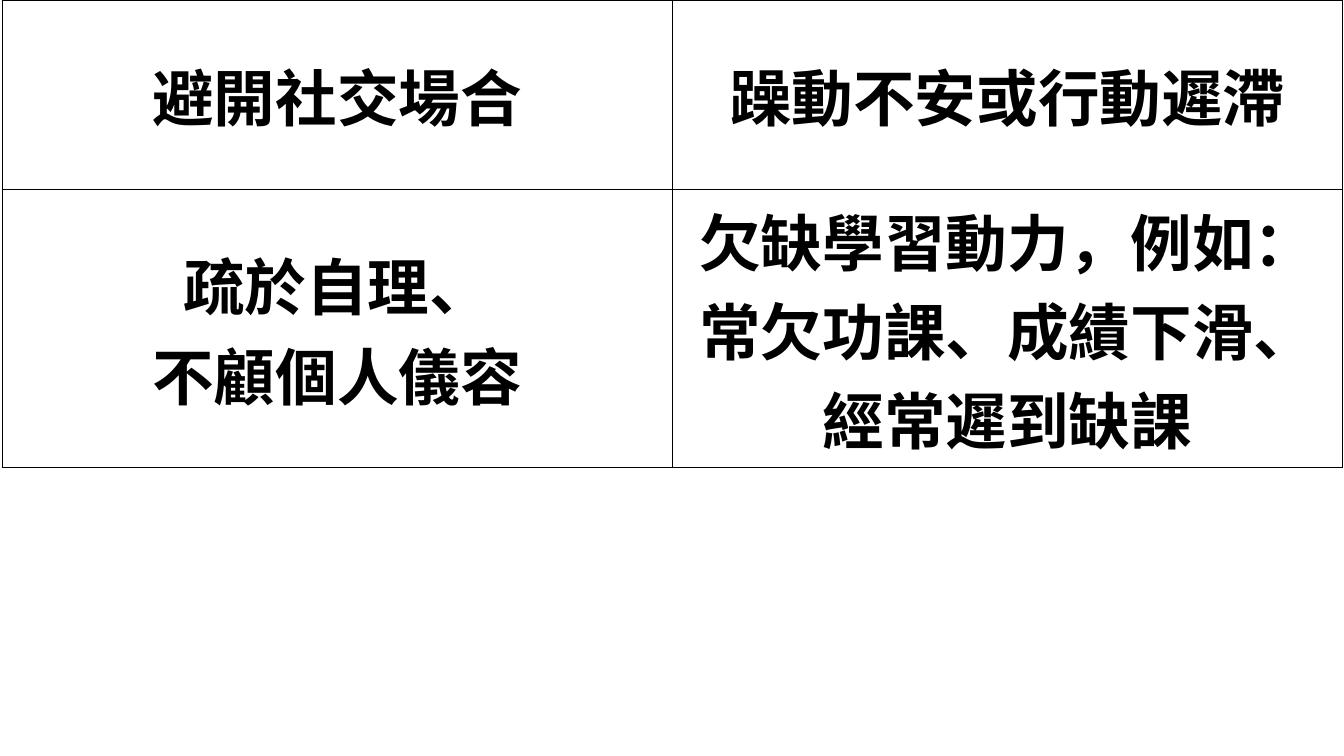
from lxml import etree
from pptx import Presentation
from pptx.dml.color import RGBColor
from pptx.enum import text
from pptx.oxml import ns
from pptx.util import Pt

SIGNS = [
    ["避開社交場合", "躁動不安或行動遲滯"],
    ["疏於自理、\n不顧個人儀容", "欠缺學習動力，例如：常欠功課、成績下滑、經常遲到缺課"],
]
BLACK = RGBColor(0x00, 0x00, 0x00)
WHITE = RGBColor(0xFF, 0xFF, 0xFF)
FONT = "Noto Sans CJK TC"
FONT_FORMAT = {"name": FONT, "size": Pt(44), "bold": True}
LEFT, TOP = 1.5, 0
COLUMN_WIDTH = 478.8
ROW_HEIGHTS = [135.4, 198]
BORDER_WIDTH = 1


def add_borders(cell):
    properties = cell._tc.get_or_add_tcPr()
    for position, side in enumerate(("lnL", "lnR", "lnT", "lnB")):
        line = etree.Element(ns.qn(f"a:{side}"), w=str(Pt(BORDER_WIDTH)))
        fill = etree.SubElement(line, ns.qn("a:solidFill"))
        etree.SubElement(fill, ns.qn("a:srgbClr"), val=str(BLACK))
        properties.insert(position, line)


def fill_cell(cell, wording):
    cell.text = wording
    cell.vertical_anchor = text.MSO_ANCHOR.MIDDLE
    cell.fill.solid()
    cell.fill.fore_color.rgb = WHITE
    add_borders(cell)
    for para in cell.text_frame.paragraphs:
        para.alignment = text.PP_ALIGN.CENTER
        for span in para.runs:
            for name, value in FONT_FORMAT.items():
                setattr(span.font, name, value)
            span.font.color.rgb = BLACK
            etree.SubElement(span._r.get_or_add_rPr(), ns.qn("a:ea"), typeface=FONT)


def main():
    deck = Presentation()
    deck.slide_width, deck.slide_height = Pt(960), Pt(540)
    page = deck.slides.add_slide(deck.slide_layouts[6])
    columns = len(SIGNS[0])
    table = page.shapes.add_table(
        len(SIGNS), columns, Pt(LEFT), Pt(TOP),
        Pt(COLUMN_WIDTH * columns), Pt(sum(ROW_HEIGHTS)),
    ).table
    table.first_row = table.horz_banding = False
    for column in table.columns:
        column.width = Pt(COLUMN_WIDTH)
    for row, height, wordings in zip(table.rows, ROW_HEIGHTS, SIGNS):
        row.height = Pt(height)
        for cell, wording in zip(row.cells, wordings):
            fill_cell(cell, wording)
    deck.save("out.pptx")


if __name__ == "__main__":
    main()
